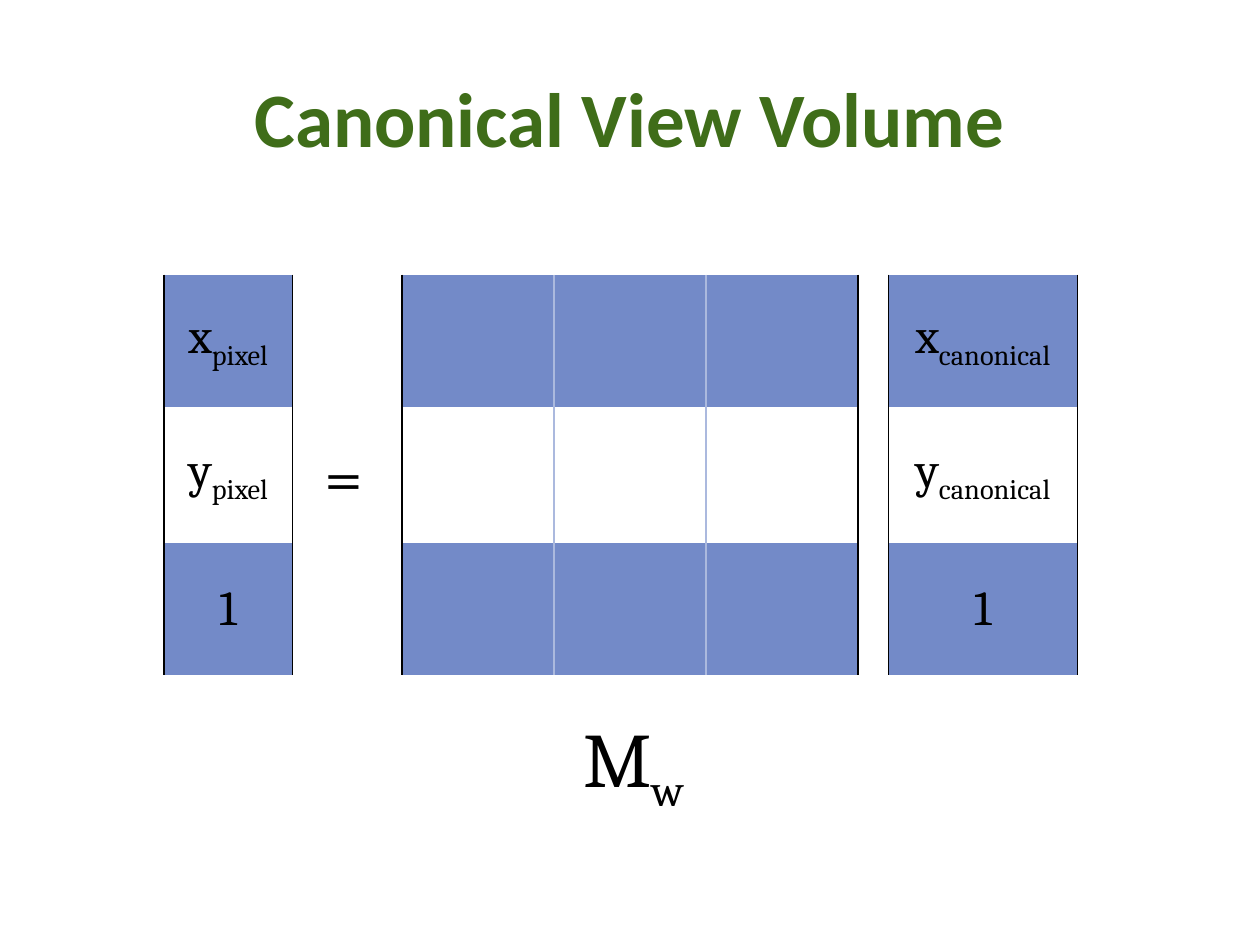
from dataclasses import dataclass

from pptx import Presentation
from pptx.dml.color import RGBColor as RGB
from pptx.enum.text import MSO_ANCHOR as Anchor, MSO_AUTO_SIZE as Fit, PP_ALIGN as Align
from pptx.oxml.ns import qn
from pptx.util import Inches, Pt
from lxml.etree import SubElement


@dataclass(frozen=True)
class Theme:
    green: str = "3F6D19"
    ink: str = "000000"
    band: str = "738AC8"
    grid: str = "ABB9DE"
    alpha: int = 20
    line: float = 1
    head: str = "Calibri"
    math: str = "Cambria"
    big: int = 44
    sign: int = 40
    cell: int = 28


THEME = Theme()
PLAIN = "{2D5ABB26-0587-4C30-8999-92F81FD0307C}"  # no style, no grid
ROWS = (1.05, 1.08, 1.05)


def add_run(para, text, size, face=THEME.math, color=THEME.ink, bold=False, sub=False):
    run = para.add_run()
    run.text = text
    font = run.font
    font.size, font.name, font.bold = Pt(size), face, bold
    font.color.rgb = RGB.from_string(color)
    if sub:
        run._r.get_or_add_rPr().set("baseline", "-25000")


def add_term(para, base, sub, size):
    """Write a symbol with an optional subscript."""
    add_run(para, base, size)
    if sub:
        add_run(para, sub, size, sub=True)


def add_edge(cell, side, color):
    line = SubElement(cell._tc.get_or_add_tcPr(), qn(f"a:ln{side}"),
                      w=str(Pt(THEME.line)))
    fill = SubElement(line, qn("a:solidFill"))
    SubElement(fill, qn("a:srgbClr"), val=color)


def fill_cell(cell, banded):
    if not banded:
        cell.fill.background()
        return
    cell.fill.solid()
    cell.fill.fore_color.rgb = RGB.from_string(THEME.band)
    color = cell._tc.tcPr.find(".//" + qn("a:srgbClr"))
    SubElement(color, qn("a:alpha"), val=str(THEME.alpha * 1000))


def add_matrix(slide, box, cols=1, terms=()):
    """Draw a banded matrix with black outer sides; terms fill its first column."""
    left, top, width, height = map(Inches, box)
    frame = slide.shapes.add_table(len(ROWS), cols, left, top, width, height)
    table = frame.table
    table._tbl.tblPr.find(qn("a:tableStyleId")).text = PLAIN
    table.first_row = table.horz_banding = False
    for col in table.columns:
        col.width = width // cols
    for r, tall in enumerate(ROWS):
        table.rows[r].height = Inches(tall)
        for c in range(cols):
            cell = table.cell(r, c)
            cell.vertical_anchor = Anchor.MIDDLE
            add_edge(cell, "L", THEME.ink if c == 0 else THEME.grid)
            add_edge(cell, "R", THEME.ink if c == cols - 1 else THEME.grid)
            fill_cell(cell, r % 2 == 0)
    for r, (base, sub) in enumerate(terms):
        para = table.cell(r, 0).text_frame.paragraphs[0]
        para.alignment = Align.CENTER
        add_term(para, base, sub, THEME.cell)


def add_label(slide, box, base, sub, size):
    frame = slide.shapes.add_textbox(*map(Inches, box)).text_frame
    frame.word_wrap = False
    frame.auto_size = Fit.SHAPE_TO_FIT_TEXT
    add_term(frame.paragraphs[0], base, sub, size)


def set_title(slide, box, text):
    title = slide.shapes.title
    title.left, title.top, title.width, title.height = map(Inches, box)
    frame = title.text_frame
    frame.vertical_anchor = Anchor.MIDDLE
    para = frame.paragraphs[0]
    para.alignment = Align.CENTER
    add_run(para, text, THEME.big, THEME.head, THEME.green, bold=True)


def vector(name):
    return ("x", name), ("y", name), ("1", "")


def add_formula(slide, left, top):
    """Place the pixel vector, equals sign, matrix and canonical vector."""
    tall = sum(ROWS)
    add_matrix(slide, (left, top, 1.02, tall), terms=vector("pixel"))
    add_label(slide, (left + 1.18, top + 1.2, 0.51, 0.77), "=", "", THEME.sign)
    add_matrix(slide, (left + 1.89, top, 3.62, tall), cols=3)
    add_label(slide, (left + 3.23, top + tall + 0.23, 1.02, 0.84), "M", "w", THEME.big)
    add_matrix(slide, (left + 5.75, top, 1.5, tall), terms=vector("canonical"))


def main():
    deck = Presentation()
    deck.slide_width, deck.slide_height = Inches(10), Inches(7.5)
    slide = deck.slides.add_slide(deck.slide_layouts[5])
    set_title(slide, (0.5, 0.3, 9, 1.25), "Canonical View Volume")
    add_formula(slide, 1.3, 2.18)
    deck.save("out.pptx")


if __name__ == "__main__":
    main()
